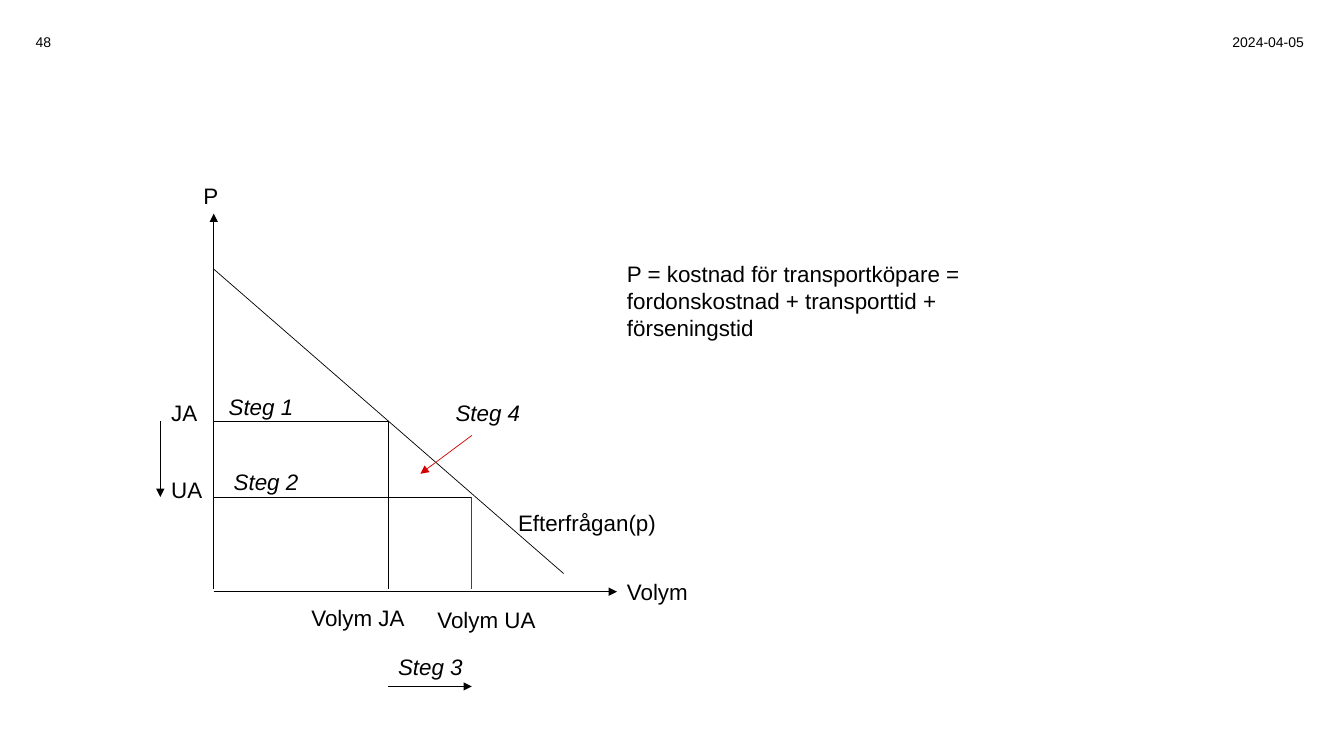
from lxml import etree
from pptx import Presentation
from pptx.dml.color import RGBColor
from pptx.enum.shapes import MSO_CONNECTOR
from pptx.enum.text import MSO_ANCHOR, PP_ALIGN
from pptx.oxml.ns import qn
from pptx.util import Inches, Pt

STRAIGHT = MSO_CONNECTOR.STRAIGHT
TOP, MIDDLE = MSO_ANCHOR.TOP, MSO_ANCHOR.MIDDLE
LEFT, CENTER, RIGHT = PP_ALIGN.LEFT, PP_ALIGN.CENTER, PP_ALIGN.RIGHT

COLORS = {"black": "000000", "red": "D70000"}
FONT = "Arial"
LABEL_HEIGHT = 0.37

# Positions shared by the axes, the price levels and the volumes
AXIS_X, AXIS_Y = 2.12, 5.87
PRICE_JA, PRICE_UA = 4.18, 4.93
VOLUME_JA, VOLUME_UA = 3.85, 4.68
DROP_END = 5.84

LABELS = [
    # text, left, top, width, italic
    ("P", 1.92, 1.76, 0.83, False),
    ("Volym", 6.12, 5.69, 1.91, False),
    ("JA", 1.6, 3.91, 0.63, False),
    ("UA", 1.6, 4.67, 0.63, False),
    ("Efterfrågan(p)", 5.04, 5, 2.14, False),
    ("Volym JA", 2.99, 5.94, 1.2, False),
    ("Volym UA", 4.24, 5.96, 1.2, False),
    ("Steg 1", 2.17, 3.85, 1.2, True),
    ("Steg 2", 2.22, 4.6, 1.2, True),
    ("Steg 3", 3.85, 6.43, 1.2, True),
    ("Steg 4", 4.42, 3.91, 1.2, True),
]

LINES = [
    # start, end, colour, arrow
    ((AXIS_X, DROP_END), (AXIS_X, 2.12), "black", True),
    ((AXIS_X, AXIS_Y), (6.12, AXIS_Y), "black", True),
    ((AXIS_X, 2.67), (5.59, 5.69), "black", False),
    ((AXIS_X, PRICE_JA), (VOLUME_JA, PRICE_JA), "black", False),
    ((AXIS_X, PRICE_UA), (VOLUME_UA, PRICE_UA), "black", False),
    ((VOLUME_JA, PRICE_JA), (VOLUME_JA, DROP_END), "black", False),
    ((VOLUME_UA, PRICE_UA), (VOLUME_UA, DROP_END), "red", False),
    ((VOLUME_JA, 6.81), (VOLUME_UA, 6.81), "black", True),
    ((VOLUME_UA, 4.32), (4.17, 4.7), "red", True),
    ((1.59, PRICE_JA), (1.59, PRICE_UA), "black", True),
]


def add_text(slide, text, left, top, width, height=LABEL_HEIGHT, size=16,
             italic=False, align=LEFT, anchor=TOP):
    box = slide.shapes.add_textbox(
        Inches(left), Inches(top), Inches(width), Inches(height))
    frame = box.text_frame
    frame.word_wrap = True
    frame.vertical_anchor = anchor
    paragraph = frame.paragraphs[0]
    paragraph.alignment = align
    run = paragraph.add_run()
    run.text = text
    run.font.name = FONT
    run.font.size = Pt(size)
    run.font.italic = italic
    run.font.color.rgb = RGBColor.from_string(COLORS["black"])


def add_line(slide, start, end, color, arrow):
    x1, y1 = start
    x2, y2 = end
    connector = slide.shapes.add_connector(
        STRAIGHT, Inches(x1), Inches(y1), Inches(x2), Inches(y2))
    connector.line.width = Pt(0.5)
    connector.line.color.rgb = RGBColor.from_string(COLORS[color])
    if arrow:
        line = connector.line._get_or_add_ln()
        etree.SubElement(line, qn("a:tailEnd"), type="triangle")
    etree.SubElement(connector._element.spPr, qn("a:effectLst"))


def main():
    presentation = Presentation()
    presentation.slide_width = Inches(13.33)
    presentation.slide_height = Inches(7.5)
    slide = presentation.slides.add_slide(presentation.slide_layouts[6])

    add_text(slide, "2024-04-05", 11.1, 0.22, 1.93, 0.4, size=10,
             align=RIGHT, anchor=MIDDLE)
    add_text(slide, "48", 0, 0.22, 0.86, 0.4, size=10,
             align=CENTER, anchor=MIDDLE)
    for line in LINES:
        add_line(slide, *line)
    for text, left, top, width, italic in LABELS:
        add_text(slide, text, left, top, width, italic=italic)
    add_text(slide, "P = kostnad för transportköpare = fordonskostnad + "
             "transporttid + förseningstid", 6.12, 2.53, 3.56, 0.91)

    presentation.save("out.pptx")


if __name__ == "__main__":
    main()
